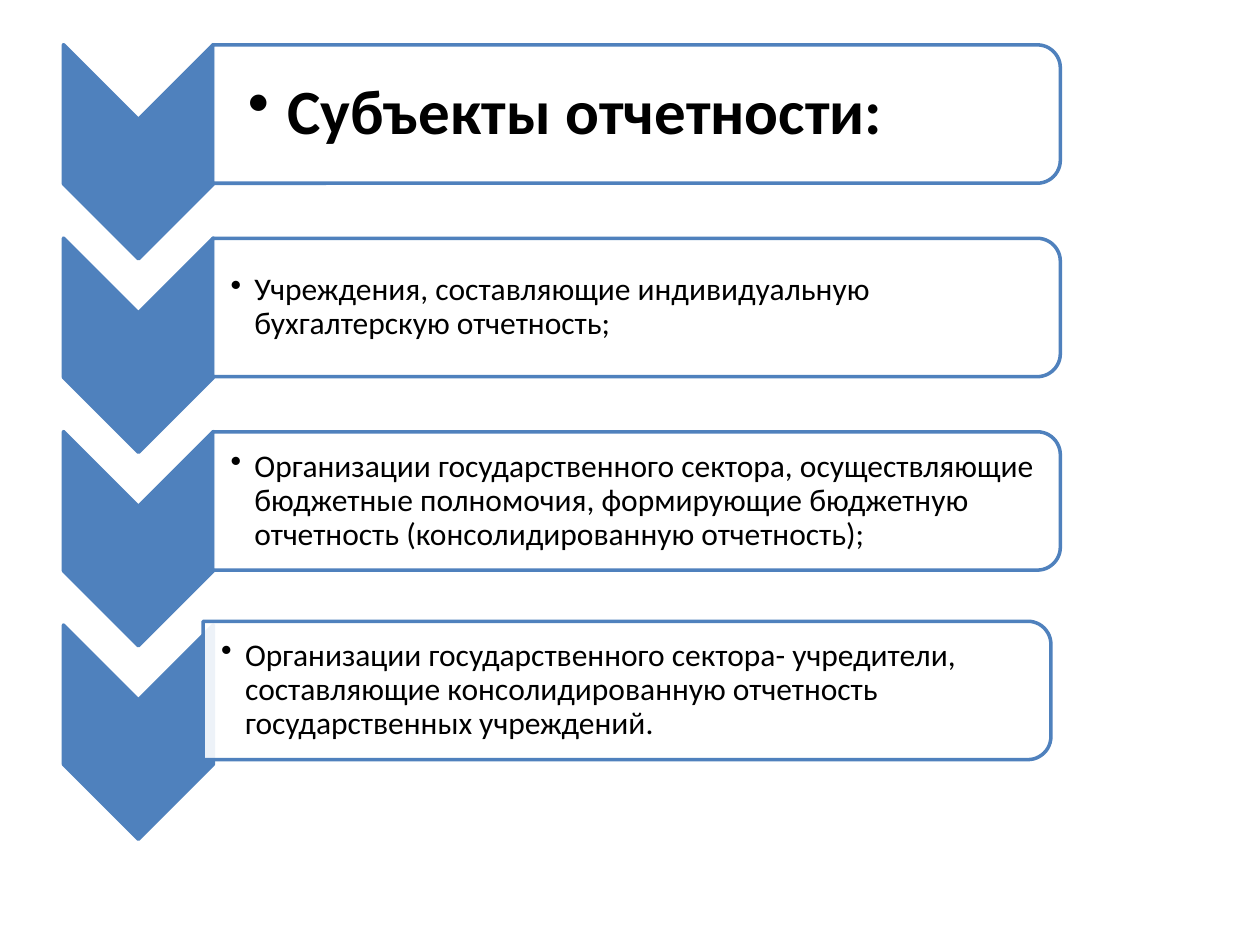
from dataclasses import dataclass

from lxml import etree
from pptx import Presentation
from pptx import util as u
from pptx.dml.color import RGBColor
from pptx.enum import shapes, text
from pptx.oxml import ns

BLUE = "4F81BD"
WHITE = "FFFFFF"
BLACK = "000000"
ROW_PITCH = 3.9
CHEVRON_LENGTH, CHEVRON_BREADTH = 4.32, 3.02
PANEL_WIDTH, PANEL_HEIGHT = 17.09, 2.79
CAPTION_WIDTH, CAPTION_HEIGHT = 16.97, 2.51
CHEVRON_CENTER_X, CHEVRON_CENTER_Y = 2.79, 3.06
PANEL_CENTER_X, PANEL_CENTER_Y = 12.83, 2.3
CAPTION_LEFT = 4.29


@dataclass
class Entry:
    wording: str
    size: int = 18
    bold: bool = False
    indent: float = 0.48
    inset: float = 0.36
    margin: float = 0.03
    shift_x: float = 0
    shift_y: float = 0


ENTRIES = [
    Entry("Субъекты отчетности:", size=36, bold=True,
          indent=0.79, inset=0.71, margin=0.08),
    Entry("Учреждения, составляющие индивидуальную бухгалтерскую отчетность;"),
    Entry("Организации государственного сектора, осуществляющие бюджетные "
          "полномочия, формирующие бюджетную отчетность "
          "(консолидированную отчетность);"),
    Entry("Организации государственного сектора- учредители, составляющие "
          "консолидированную отчетность государственных учреждений.",
          shift_x=-0.19, shift_y=-0.08),
]


def paint(color_format, color: str) -> None:
    color_format.rgb = RGBColor.from_string(color)


def add_turned(slide, kind, center_x: float, center_y: float,
               length: float, breadth: float, fill: str):
    turned = slide.shapes.add_shape(
        kind, u.Cm(center_x - length / 2), u.Cm(center_y - breadth / 2),
        u.Cm(length), u.Cm(breadth))
    turned.rotation = 90
    turned.shadow.inherit = False
    turned.fill.solid()
    paint(turned.fill.fore_color, fill)
    paint(turned.line.color, BLUE)
    turned.line.width = u.Pt(2)
    return turned


def set_opacity(shape, percent: int) -> None:
    color = shape.fill._xPr.find(ns.qn("a:solidFill"))[0]
    etree.SubElement(color, ns.qn("a:alpha"), val=str(percent * 1000))


def add_bullet_text(slide, wording: str, *, left: float, top: float,
                    size: int, bold: bool, indent: float,
                    inset: float, margin: float) -> None:
    caption = slide.shapes.add_textbox(
        u.Cm(left), u.Cm(top), u.Cm(CAPTION_WIDTH), u.Cm(CAPTION_HEIGHT))
    frame = caption.text_frame
    frame.word_wrap = True
    frame.vertical_anchor = text.MSO_ANCHOR.MIDDLE
    frame.margin_left = u.Cm(inset)
    frame.margin_top = frame.margin_right = frame.margin_bottom = u.Cm(margin)
    paragraph = frame.paragraphs[0]
    paragraph.level = 1
    paragraph.alignment = text.PP_ALIGN.LEFT
    paragraph.line_spacing = 0.9
    properties = paragraph._p.get_or_add_pPr()
    properties.set("marL", str(u.Cm(indent)))
    properties.set("indent", str(-u.Cm(indent)))
    etree.SubElement(properties, ns.qn("a:buChar"), char="•")
    run = paragraph.add_run()
    run.text = wording
    run.font.name = "Calibri"
    run.font.size = u.Pt(size)
    run.font.bold = bold
    paint(run.font.color, BLACK)


def add_entry(slide, entry: Entry, row: int) -> None:
    offset = row * ROW_PITCH
    panel_y = PANEL_CENTER_Y + offset + entry.shift_y
    add_turned(slide, shapes.MSO_SHAPE.CHEVRON, CHEVRON_CENTER_X,
               CHEVRON_CENTER_Y + offset, CHEVRON_LENGTH, CHEVRON_BREADTH, BLUE)
    panel = add_turned(slide, shapes.MSO_SHAPE.ROUND_2_SAME_RECTANGLE,
                       PANEL_CENTER_X + entry.shift_x, panel_y,
                       PANEL_HEIGHT, PANEL_WIDTH, WHITE)
    set_opacity(panel, 90)
    add_bullet_text(slide, entry.wording, left=CAPTION_LEFT + entry.shift_x,
                    top=panel_y - CAPTION_HEIGHT / 2, size=entry.size,
                    bold=entry.bold, indent=entry.indent,
                    inset=entry.inset, margin=entry.margin)


def main() -> None:
    deck = Presentation()
    deck.slide_width, deck.slide_height = u.Cm(25.4), u.Cm(19.05)
    slide = deck.slides.add_slide(deck.slide_layouts[6])
    for row, entry in enumerate(ENTRIES):
        add_entry(slide, entry, row)
    deck.save("out.pptx")


if __name__ == "__main__":
    main()
